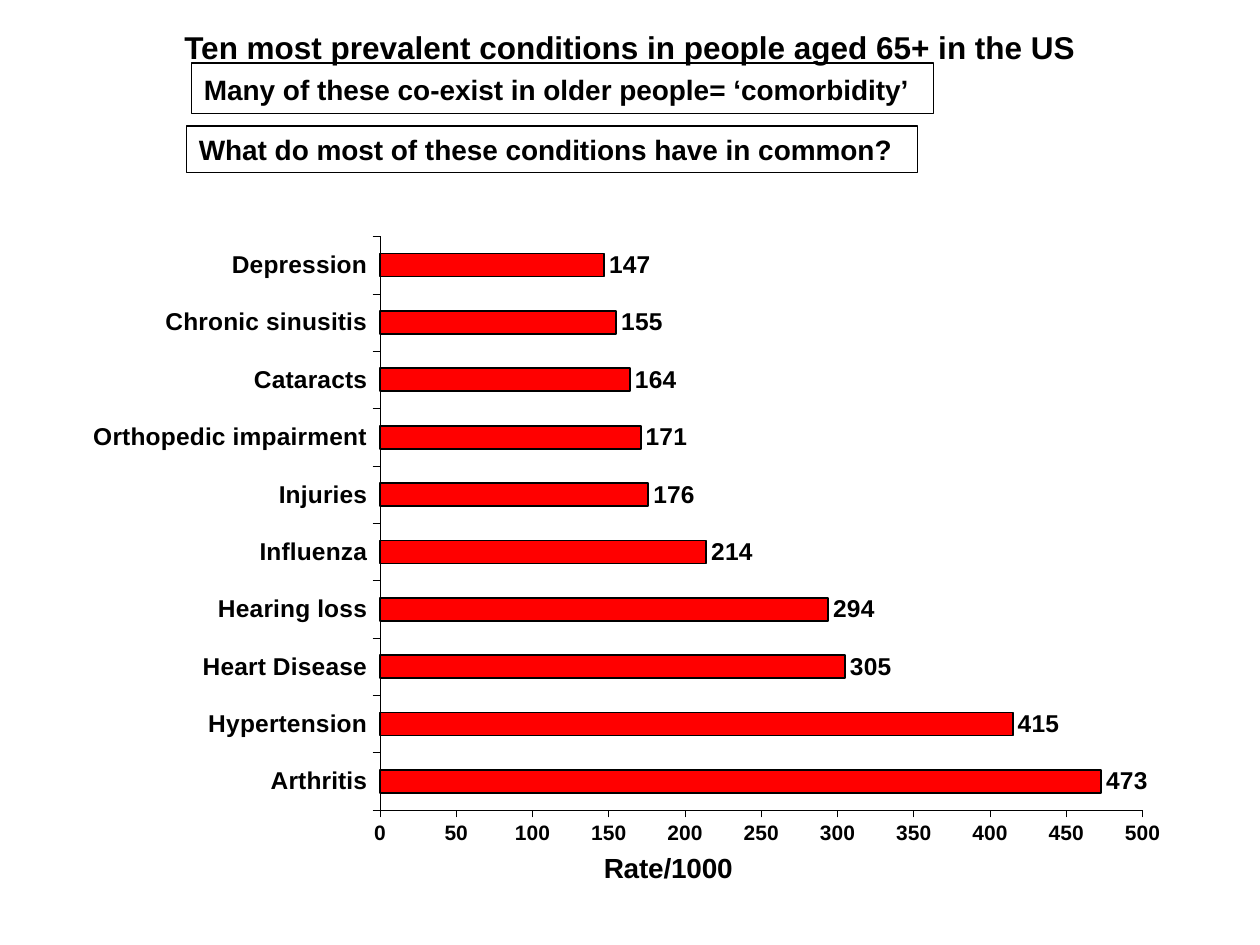
from dataclasses import dataclass

from pptx import Presentation
from pptx.chart.data import CategoryChartData
from pptx.dml.color import RGBColor
from pptx.enum.chart import XL_CHART_TYPE, XL_LABEL_POSITION, XL_TICK_MARK
from pptx.enum.shapes import MSO_SHAPE
from pptx.enum.text import MSO_ANCHOR, MSO_AUTO_SIZE, PP_ALIGN
from pptx.oxml import parse_xml
from pptx.oxml.ns import nsdecls, qn
from pptx.util import Inches, Pt


@dataclass(frozen=True)
class Theme:
    font: str = "Arial"
    ink: RGBColor = RGBColor(0, 0, 0)
    bar: RGBColor = RGBColor(255, 0, 0)
    heading: int = 18
    callout: int = 16
    category: int = 14
    scale: int = 12


@dataclass(frozen=True)
class Callout:
    left: float
    top: float
    width: float
    height: float
    runs: tuple[tuple[str, int], ...]
    wrap: bool


THEME = Theme()

CALLOUTS = (
    Callout(1.48, 1, 5.8, 0.37,
            (("What do most of these conditions have in common?", THEME.callout),), True),
    Callout(1.52, 0.5, 5.89, 0.4,
            (("Many of these co-exist in older people= ‘comorbidity’", THEME.callout),
             (" ", THEME.heading)), False),
)

RATES = {
    "Arthritis": 473, "Hypertension": 415, "Heart Disease": 305, "Hearing loss": 294,
    "Influenza": 214, "Injuries": 176, "Orthopedic impairment": 171, "Cataracts": 164,
    "Chronic sinusitis": 155, "Depression": 147,
}


def style_font(font, size: int) -> None:
    font.name = THEME.font
    font.size = Pt(size)
    font.bold = True
    font.color.rgb = THEME.ink


def add_run(paragraph, text: str, size: int) -> None:
    run = paragraph.add_run()
    run.text = text
    style_font(run.font, size)


def add_heading(slide, text: str) -> None:
    shape = slide.shapes.add_textbox(Inches(0.5), Inches(0.17), Inches(9), Inches(0.58))
    shape.text_frame.word_wrap = True
    paragraph = shape.text_frame.paragraphs[0]
    paragraph.alignment = PP_ALIGN.CENTER
    add_run(paragraph, text, THEME.heading)


def add_callout(slide, callout: Callout) -> None:
    shape = slide.shapes.add_shape(
        MSO_SHAPE.RECTANGLE, Inches(callout.left), Inches(callout.top),
        Inches(callout.width), Inches(callout.height))
    shape.shadow.inherit = False
    shape.fill.background()
    shape.line.color.rgb = THEME.ink
    shape.line.width = Pt(0.75)
    frame = shape.text_frame
    frame.word_wrap = callout.wrap
    frame.auto_size = MSO_AUTO_SIZE.SHAPE_TO_FIT_TEXT
    frame.vertical_anchor = MSO_ANCHOR.TOP
    paragraph = frame.paragraphs[0]
    paragraph.alignment = PP_ALIGN.LEFT
    for text, size in callout.runs:
        add_run(paragraph, text, size)


def set_layout(parent, position: int, inner: bool = False, **fractions: float) -> None:
    """Place a chart part by fractions of the chart's size."""
    for old in parent.findall(qn("c:layout")):
        parent.remove(old)
    target = '<c:layoutTarget val="inner"/>' if inner else ""
    modes = '<c:xMode val="edge"/><c:yMode val="edge"/>'
    values = "".join(f'<c:{name} val="{value}"/>' for name, value in fractions.items())
    parent.insert(position, parse_xml(
        f'<c:layout {nsdecls("c")}><c:manualLayout>{target}{modes}{values}'
        "</c:manualLayout></c:layout>"))


def style_axis(axis, size: int) -> None:
    axis.has_major_gridlines = False
    axis.major_tick_mark = XL_TICK_MARK.OUTSIDE
    axis.minor_tick_mark = XL_TICK_MARK.NONE
    axis.format.line.color.rgb = THEME.ink
    axis.format.line.width = Pt(0.25)
    style_font(axis.tick_labels.font, size)


def add_rate_chart(slide) -> None:
    data = CategoryChartData()
    data.categories = list(RATES)
    data.add_series("Series 1", list(RATES.values()))
    chart = slide.shapes.add_chart(
        XL_CHART_TYPE.BAR_CLUSTERED, Inches(0.5), Inches(1.75),
        Inches(8.86), Inches(5.33), data).chart
    chart.has_legend = False
    chart.has_title = False
    style_font(chart.font, THEME.heading)

    # Axes and their caption
    style_axis(chart.category_axis, THEME.category)
    style_axis(chart.value_axis, THEME.scale)
    chart.value_axis.minimum_scale = 0
    chart.value_axis.maximum_scale = 500
    chart.value_axis.major_unit = 50
    title = chart.category_axis.axis_title
    add_run(title.text_frame.paragraphs[0], "Rate/1000", THEME.callout)
    body = title.text_frame._txBody.find(qn("a:bodyPr"))
    body.set("rot", "0")
    body.set("vert", "horz")
    set_layout(title._element, 1, x=0.48, y=0.94)

    # Bars and value labels
    plot = chart.plots[0]
    plot.gap_width = 150
    plot.vary_by_categories = False
    series = plot.series[0]
    series.format.fill.solid()
    series.format.fill.fore_color.rgb = THEME.bar
    series.format.line.color.rgb = THEME.ink
    series.format.line.width = Pt(1)
    labels = series.data_labels
    labels.show_value = True
    labels.position = XL_LABEL_POSITION.OUTSIDE_END
    style_font(labels.font, THEME.category)
    plot_area = chart._chartSpace.chart.plotArea
    set_layout(plot_area, 0, inner=True, x=0.284, y=0.024, w=0.683, h=0.863)


def main() -> None:
    presentation = Presentation()
    presentation.slide_width = Inches(10)
    presentation.slide_height = Inches(7.5)
    slide = presentation.slides.add_slide(presentation.slide_layouts[6])
    add_heading(slide, "Ten most prevalent conditions in people aged 65+ in the US")
    add_rate_chart(slide)
    for callout in CALLOUTS:
        add_callout(slide, callout)
    presentation.save("out.pptx")


if __name__ == "__main__":
    main()
